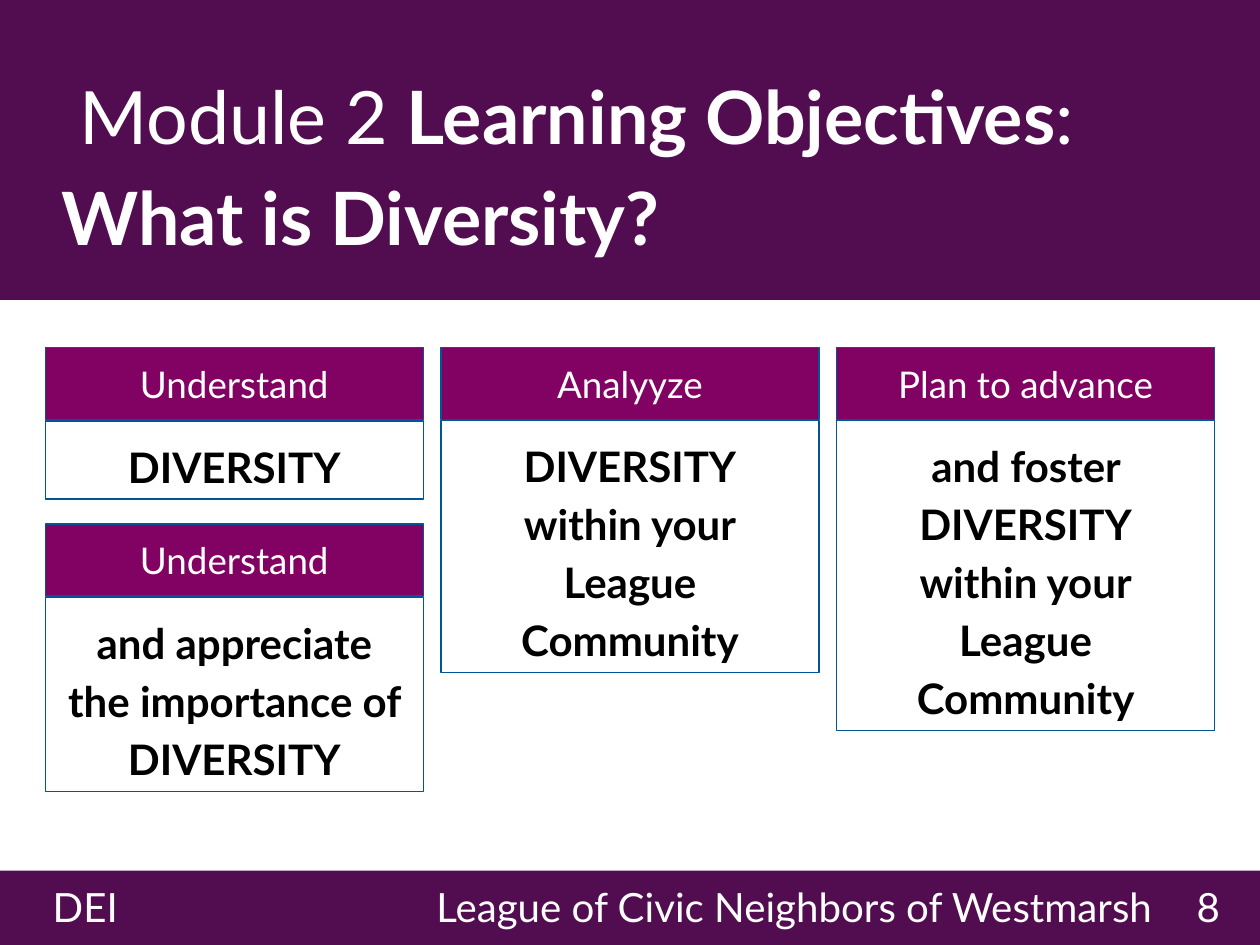
from dataclasses import dataclass

from pptx import Presentation
from pptx.dml.color import RGBColor
from pptx.enum.shapes import MSO_SHAPE
from pptx.enum.text import MSO_ANCHOR, MSO_AUTO_SIZE, PP_ALIGN
from pptx.util import Inches, Pt


@dataclass(frozen=True)
class Theme:
    font: str = "Lato"
    band: RGBColor = RGBColor(0x52, 0x0C, 0x50)
    heading: RGBColor = RGBColor(0x82, 0x02, 0x63)
    outline: RGBColor = RGBColor(0x00, 0x55, 0x96)
    light: RGBColor = RGBColor(0xFF, 0xFF, 0xFF)
    dark: RGBColor = RGBColor(0x00, 0x00, 0x00)
    title_size: int = 42
    body_size: int = 24
    footer_size: int = 23
    heading_size: int = 21
    line_spacing: float = 1.15


SLIDE_WIDTH, SLIDE_HEIGHT = 10, 7.5
FOOTER_TOP, FOOTER_TEXT_HEIGHT = 6.91, 0.57

CARD_WIDTH, HEADING_HEIGHT = 3, 0.57
BODY_OFFSET, BODY_PADDING, LINE_HEIGHT = 0.58, 0.16, 0.46
COLUMNS = [0.36 + 3.14 * column for column in range(3)]
FIRST_ROW, SECOND_ROW = 2.76, 4.16

# column, top, heading, body paragraphs, number of wrapped body lines
CARDS = [
    (0, FIRST_ROW, "Understand", ["DIVERSITY"], 1),
    (1, FIRST_ROW, "Analyyze",
     ["DIVERSITY", "within your", "League Community"], 4),
    (2, FIRST_ROW, "Plan to advance",
     ["and foster DIVERSITY", "within your", "League Community"], 5),
    (0, SECOND_ROW, "Understand",
     ["and appreciate", "the importance of DIVERSITY"], 3),
]

# text, bold
TITLE_RUNS = [
    (" ", True),
    ("Module 2 ", False),
    ("Learning Objectives", True),
    (": ", False),
    ("What is Diversity?", True),
]


class SlideBuilder:
    def __init__(self, slide, theme):
        self.slide = slide
        self.theme = theme

    def rectangle(self, left, top, width, height, fill, outline=None):
        shape = self.slide.shapes.add_shape(
            MSO_SHAPE.RECTANGLE,
            Inches(left), Inches(top), Inches(width), Inches(height))
        shape.shadow.inherit = False
        shape.fill.solid()
        shape.fill.fore_color.rgb = fill
        if outline is None:
            shape.line.fill.background()
        else:
            shape.line.color.rgb = outline
            shape.line.width = Pt(0.75)
        return shape

    def frame(self, shape, anchor, vertical_inset=0.1):
        text_frame = shape.text_frame
        text_frame.word_wrap = True
        text_frame.vertical_anchor = anchor
        text_frame.margin_left = text_frame.margin_right = Inches(0.1)
        text_frame.margin_top = text_frame.margin_bottom = Inches(vertical_inset)
        return text_frame

    def format_run(self, run, size, color, bold=False):
        run.font.name = self.theme.font
        run.font.size = Pt(size)
        run.font.color.rgb = color
        run.font.bold = bold

    def set_lines(self, text_frame, lines, size, color, align,
                  bold=False, line_spacing=None):
        text_frame.text = "\n".join(lines)
        for paragraph in text_frame.paragraphs:
            paragraph.alignment = align
            paragraph.line_spacing = line_spacing
            for run in paragraph.runs:
                self.format_run(run, size, color, bold)

    def text_box(self, left, top, width, height):
        return self.slide.shapes.add_textbox(
            Inches(left), Inches(top), Inches(width), Inches(height))

    def title(self, runs):
        text_frame = self.frame(
            self.text_box(0.39, 0.41, 9.27, 1.75), MSO_ANCHOR.TOP, 0.05)
        paragraph = text_frame.paragraphs[0]
        paragraph.line_spacing = self.theme.line_spacing
        for text, bold in runs:
            run = paragraph.add_run()
            run.text = text
            self.format_run(run, self.theme.title_size, self.theme.light, bold)

    def footer_text(self, text, left, width, align):
        box = self.text_box(left, FOOTER_TOP, width, FOOTER_TEXT_HEIGHT)
        self.set_lines(self.frame(box, MSO_ANCHOR.MIDDLE), [text],
                       self.theme.footer_size, self.theme.light, align)

    def card(self, left, top, heading, body_lines, line_count):
        theme = self.theme
        body = self.rectangle(
            left, top + BODY_OFFSET, CARD_WIDTH,
            BODY_PADDING + LINE_HEIGHT * line_count, theme.light, theme.outline)
        body_frame = self.frame(body, MSO_ANCHOR.TOP)
        body_frame.auto_size = MSO_AUTO_SIZE.SHAPE_TO_FIT_TEXT
        self.set_lines(body_frame, body_lines, theme.body_size, theme.dark,
                       PP_ALIGN.CENTER, True, theme.line_spacing)
        header = self.rectangle(left, top, CARD_WIDTH, HEADING_HEIGHT,
                                theme.heading, theme.outline)
        self.set_lines(self.frame(header, MSO_ANCHOR.MIDDLE), [heading],
                       theme.heading_size, theme.light, PP_ALIGN.CENTER)


def main():
    presentation = Presentation()
    presentation.slide_width = Inches(SLIDE_WIDTH)
    presentation.slide_height = Inches(SLIDE_HEIGHT)
    slide = presentation.slides.add_slide(presentation.slide_layouts[6])
    theme = Theme()
    builder = SlideBuilder(slide, theme)

    builder.rectangle(0, FOOTER_TOP, SLIDE_WIDTH, SLIDE_HEIGHT - FOOTER_TOP,
                      theme.band)
    builder.rectangle(0, 0, SLIDE_WIDTH, 2.38, theme.band)
    builder.footer_text("League of Civic Neighbors of Westmarsh",
                        2.65, 6.6, PP_ALIGN.RIGHT)
    builder.footer_text("8", 9.28, 0.5, PP_ALIGN.RIGHT)
    builder.footer_text("DEI", 0.32, 2.28, PP_ALIGN.LEFT)
    builder.title(TITLE_RUNS)
    for column, top, heading, body_lines, line_count in CARDS:
        builder.card(COLUMNS[column], top, heading, body_lines, line_count)

    presentation.save("out.pptx")


if __name__ == "__main__":
    main()
